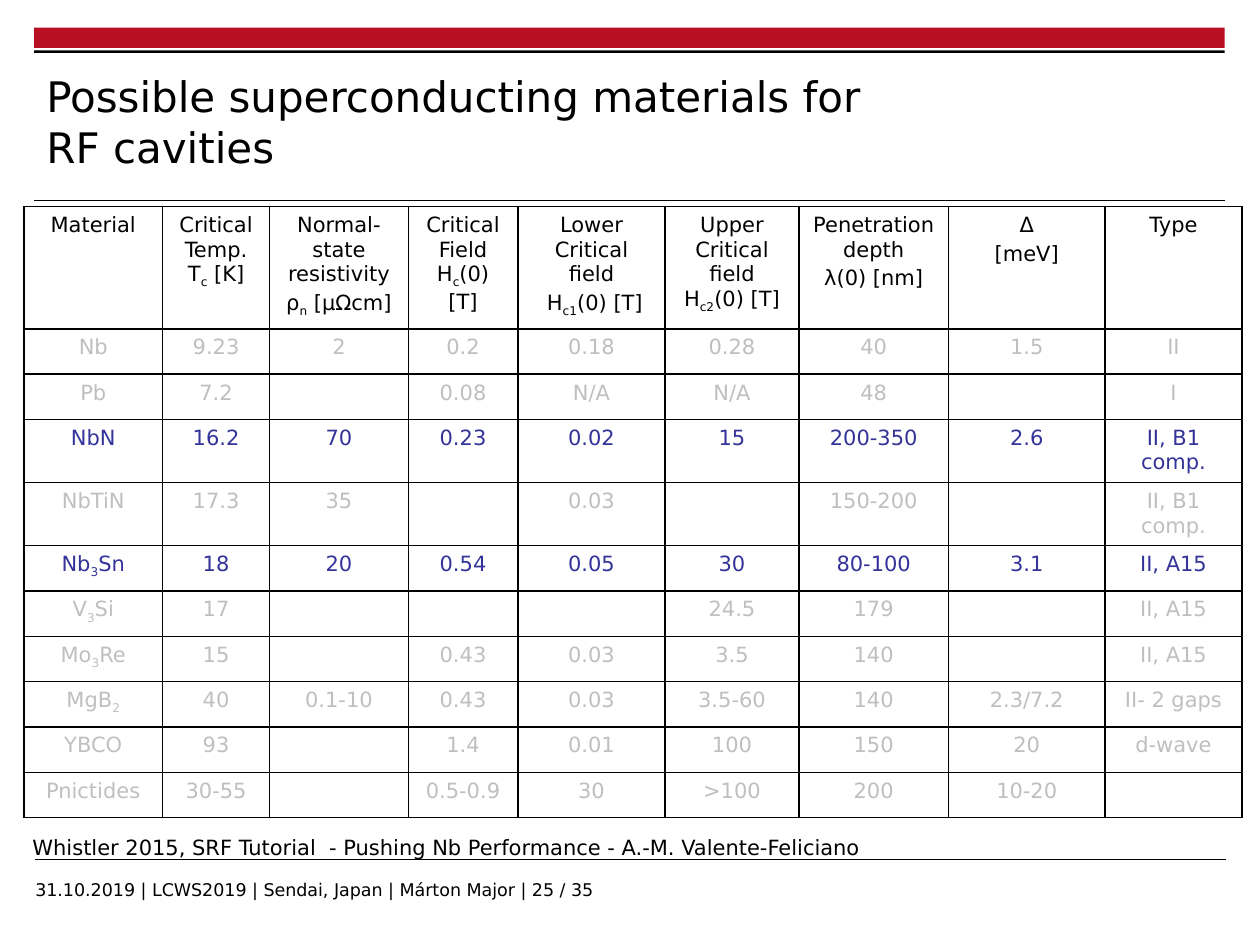
import pptx
import pptx.util
import pptx.dml.color
import pptx.enum.shapes
import pptx.enum.text
import pptx.oxml.ns
import lxml.etree

Inches, Pt = pptx.util.Inches, pptx.util.Pt
RGBColor = pptx.dml.color.RGBColor
ANCHOR = pptx.enum.text.MSO_ANCHOR
SHAPES = pptx.enum.shapes
qn = pptx.oxml.ns.qn

BLACK = RGBColor(0, 0, 0)
WHITE = RGBColor(0xFF, 0xFF, 0xFF)
RED = RGBColor(0xB9, 0x0F, 0x22)
GREY = RGBColor(0xBF, 0xBF, 0xBF)
BLUE = RGBColor(0x33, 0x33, 0x99)
FONT = "DejaVu Sans"

TITLE = "Possible superconducting materials for RF cavities"
SOURCE = "Whistler 2015, SRF Tutorial  - Pushing Nb Performance - A.-M. Valente-Feliciano"
FOOTER = "31.10.2019 | LCWS2019 | Sendai, Japan | Márton Major | 25 / 35"

# Text between tildes is subscript; each list item is a paragraph.
# Column: width in inches, space between paragraphs in points, heading.
COLUMNS = [
    (1.10, 0, ["Material"]),
    (0.85, 0, ["Critical", "Temp.", "T~c~ [K]"]),
    (1.10, 2.4, ["Normal-state resistivity", "ρ~n~ [μΩcm]"]),
    (0.87, 0, ["Critical", "Field", "H~c~(0) [T]"]),
    (1.17, 2.4, ["Lower Critical field", " H~c1~(0) [T]"]),
    (1.06, 0, ["Upper Critical field H~c2~(0) [T]"]),
    (1.19, 2.4, ["Penetration depth", "λ(0) [nm]"]),
    (1.24, 2.4, ["Δ", "[meV]"]),
    (1.09, 0, ["Type"]),
]
MATERIALS = [
    ("Nb", "9.23", "2", "0.2", "0.18", "0.28", "40", "1.5", "II"),
    ("Pb", "7.2", "", "0.08", "N/A", "N/A", "48", "", "I"),
    ("NbN", "16.2", "70", "0.23", "0.02", "15", "200-350", "2.6", "II, B1 comp."),
    ("NbTiN", "17.3", "35", "", "0.03", "", "150-200", "", "II, B1 comp."),
    ("Nb~3~Sn", "18", "20", "0.54", "0.05", "30", "80-100", "3.1", "II, A15"),
    ("V~3~Si", "17", "", "", "", "24.5", "179", "", "II, A15"),
    ("Mo~3~Re", "15", "", "0.43", "0.03", "3.5", "140", "", "II, A15"),
    ("MgB~2~", "40", "0.1-10", "0.43", "0.03", "3.5-60", "140", "2.3/7.2", "II- 2 gaps"),
    ("YBCO", "93", "", "1.4", "0.01", "100", "150", "20", "d-wave"),
    ("Pnictides", "30-55", "", "0.5-0.9", "30", ">100", "200", "10-20", ""),
]
HIGHLIGHTED = {"NbN", "Nb~3~Sn"}
HEADER_HEIGHT, ROW_HEIGHT, TWO_LINE_HEIGHT = 0.97, 0.36, 0.5
TABLE_LEFT, TABLE_TOP = 0.19, 1.64
MARGIN, BODY_WIDTH = 0.27, 9.45


def write(para, text, size, color=BLACK):
    for index, piece in enumerate(text.split("~")):
        if not piece:
            continue
        span = para.add_run()
        span.text = piece
        for name, value in {"name": FONT, "size": Pt(size)}.items():
            setattr(span.font, name, value)
        span.font.color.rgb = color
        if index % 2:
            span._r.get_or_add_rPr().set("baseline", "-25000")


def add_bar(page, top, height, color):
    bar = page.shapes.add_shape(SHAPES.MSO_SHAPE.RECTANGLE, Inches(MARGIN), Inches(top),
                                Inches(BODY_WIDTH), Inches(height))
    bar.shadow.inherit = False
    bar.fill.solid()
    bar.fill.fore_color.rgb = color
    bar.line.fill.background()


def add_rule(page, left, top):
    rule = page.shapes.add_connector(SHAPES.MSO_CONNECTOR.STRAIGHT, Inches(left), Inches(top),
                                     Inches(left + BODY_WIDTH), Inches(top))
    rule.line.color.rgb = BLACK
    rule.line.width = Pt(0.6)
    lxml.etree.SubElement(rule._element.spPr, qn("a:effectLst"))


def add_text(page, bounds, text, size, **frame_format):
    box = page.shapes.add_textbox(*map(Inches, bounds))
    for name, value in {"word_wrap": True, **frame_format}.items():
        setattr(box.text_frame, name, value)
    write(box.text_frame.paragraphs[0], text, size)


def add_borders(cell):
    properties = cell._tc.get_or_add_tcPr()
    for index, side in enumerate(("lnL", "lnR", "lnT", "lnB")):
        line = lxml.etree.Element(qn("a:" + side), w=str(Pt(1)))
        fill = lxml.etree.SubElement(line, qn("a:solidFill"))
        lxml.etree.SubElement(fill, qn("a:srgbClr"), val=str(BLACK))
        properties.insert(index, line)


def fill_cell(cell, paragraphs, color, gap=0):
    cell.fill.solid()
    cell.fill.fore_color.rgb = WHITE
    add_borders(cell)
    for index, text in enumerate(paragraphs):
        para = cell.text_frame.add_paragraph() if index else cell.text_frame.paragraphs[0]
        para.alignment = pptx.enum.text.PP_ALIGN.CENTER
        if index:
            para.space_before = Pt(gap)
        write(para, text, 12, color)
        if not text:  # keeps an empty cell from growing its row
            lxml.etree.SubElement(para._p, qn("a:endParaRPr"), sz="1200")


def add_materials_table(page):
    heights = [HEADER_HEIGHT] + [TWO_LINE_HEIGHT if "comp." in row[-1] else ROW_HEIGHT
                                 for row in MATERIALS]
    widths = [column[0] for column in COLUMNS]
    table = page.shapes.add_table(len(heights), len(widths), Inches(TABLE_LEFT), Inches(TABLE_TOP),
                                  Inches(sum(widths)), Inches(sum(heights))).table
    table.first_row = table.horz_banding = False
    for row, height in zip(table.rows, heights):
        row.height = Inches(height)
    for index, (width, gap, heading) in enumerate(COLUMNS):
        table.columns[index].width = Inches(width)
        fill_cell(table.cell(0, index), heading, BLACK, gap)
    for row, material in enumerate(MATERIALS, 1):
        color = BLUE if material[0] in HIGHLIGHTED else GREY
        for column, value in enumerate(material):
            fill_cell(table.cell(row, column), [value], color)


def main():
    deck = pptx.Presentation()
    deck.slide_width, deck.slide_height = Inches(10), Inches(7.5)
    page = deck.slides.add_slide(deck.slide_layouts[6])
    add_bar(page, 0.22, 0.16, RED)
    add_rule(page, MARGIN, 1.59)
    add_rule(page, MARGIN + 0.01, 6.82)
    add_bar(page, 0.4, 0.02, BLACK)
    add_text(page, (0.28, 6.98, 9.48, 0.21), FOOTER, 10, margin_left=0, margin_right=0,
             margin_top=0, margin_bottom=0)
    add_text(page, (MARGIN, 0.5, 6.77, 0.91), TITLE, 24, vertical_anchor=ANCHOR.BOTTOM)
    add_materials_table(page)
    add_text(page, (0.16, 6.57, 7.83, 0.31), SOURCE, 12)
    deck.save("out.pptx")


if __name__ == "__main__":
    main()
